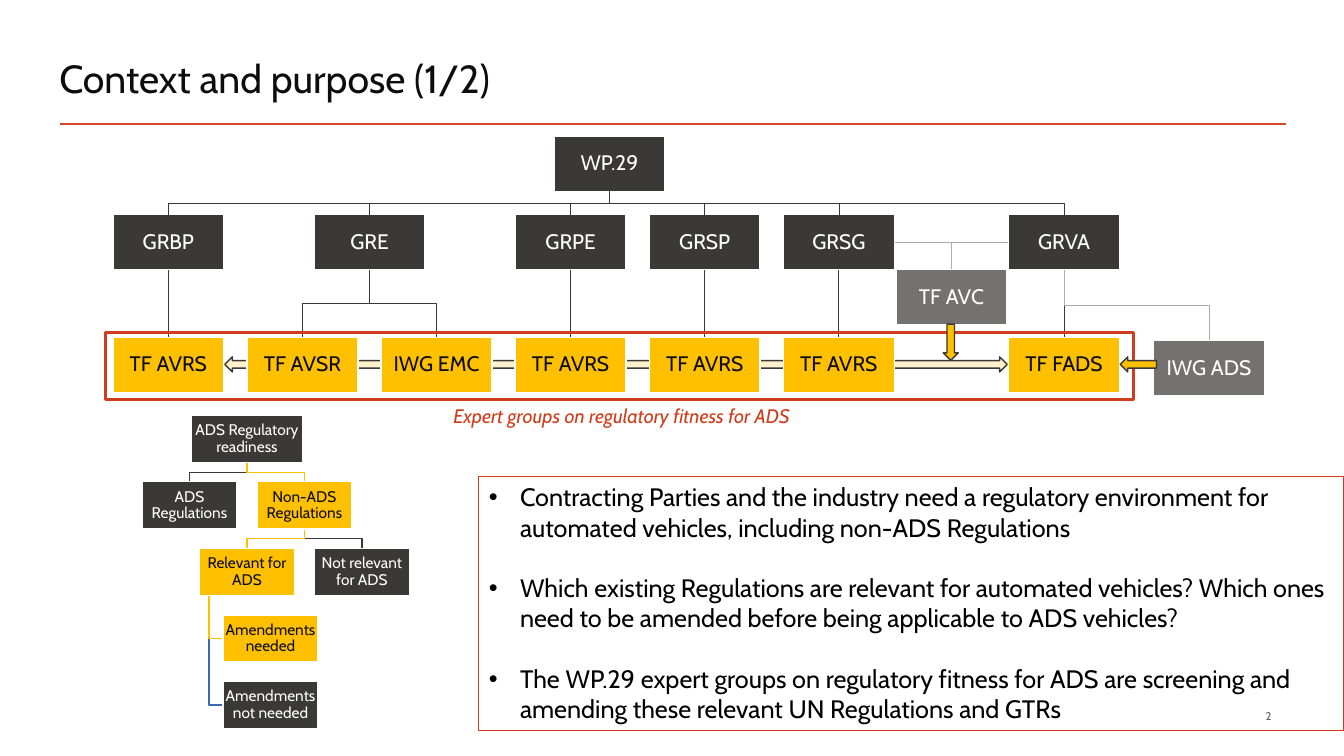
from dataclasses import dataclass
from typing import NamedTuple, Optional

from lxml import etree
from pptx import Presentation
from pptx.dml.color import RGBColor
from pptx.enum.shapes import MSO_CONNECTOR, MSO_SHAPE
from pptx.enum.text import MSO_ANCHOR, PP_ALIGN
from pptx.oxml.ns import qn
from pptx.util import Inches, Pt

RECTANGLE = MSO_SHAPE.RECTANGLE
LEFT_ARROW, TWO_WAY_ARROW = MSO_SHAPE.LEFT_ARROW, MSO_SHAPE.LEFT_RIGHT_ARROW
STRAIGHT, ELBOW = MSO_CONNECTOR.STRAIGHT, MSO_CONNECTOR.ELBOW
LEFT, CENTER, RIGHT = PP_ALIGN.LEFT, PP_ALIGN.CENTER, PP_ALIGN.RIGHT
TOP, MIDDLE = MSO_ANCHOR.TOP, MSO_ANCHOR.MIDDLE

SLIDE_WIDTH, SLIDE_HEIGHT = 13.33, 7.5
FONT = "Cabin"
DARK, YELLOW, GREY, CREAM = "3B3838", "FFC000", "767171", "FFF2CC"
WHITE, INK, BLACK, RED = "FFFFFF", "0D0D0D", "000000", "CF3D1C"
RULE_RED, PALE_GREY, BLUE, NUMBER_GREY = "D24726", "AFABAB", "3E67B2", "595959"


class Area(NamedTuple):
    left: float
    top: float
    width: float
    height: float

    @property
    def center(self) -> float:
        return self.left + self.width / 2

    @property
    def middle(self) -> float:
        return self.top + self.height / 2

    @property
    def bottom(self) -> float:
        return self.top + self.height


@dataclass(frozen=True)
class Grid:
    first_center: float
    first_top: float
    column_pitch: float
    row_pitch: float
    box_width: float
    box_height: float


@dataclass(frozen=True)
class Node:
    label: str
    column: float
    row: float
    fill: str = DARK
    parent: Optional["Node"] = None
    link: str = DARK
    width: float = 1  # in box widths

    def area(self, grid: Grid) -> Area:
        width = grid.box_width * self.width
        return Area(grid.first_center + self.column * grid.column_pitch - width / 2,
                    grid.first_top + self.row * grid.row_pitch, width, grid.box_height)


def share(left: float, top: float, width: float, height: float) -> Area:
    """Turn percentages of the slide into inches."""
    return Area(left * SLIDE_WIDTH / 100, top * SLIDE_HEIGHT / 100,
                width * SLIDE_WIDTH / 100, height * SLIDE_HEIGHT / 100)


def color(value: str) -> RGBColor:
    return RGBColor.from_string(value)


def style_shape(shape, fill: Optional[str], line: str, weight: float) -> None:
    shape.shadow.inherit = False
    if fill:
        shape.fill.solid()
        shape.fill.fore_color.rgb = color(fill)
    else:
        shape.fill.background()
    shape.line.color.rgb = color(line)
    shape.line.width = Pt(weight)


def add_box(kind, area: Area, fill: Optional[str], line: str, weight: float = 1):
    shape = slide.shapes.add_shape(kind, *map(Inches, area))
    style_shape(shape, fill, line, weight)
    return shape


def write(shape, text: str, size: float, ink: str, align=LEFT, anchor=TOP) -> None:
    frame = shape.text_frame
    frame.word_wrap = True
    frame.vertical_anchor = anchor
    frame.text = text
    for paragraph in frame.paragraphs:
        paragraph.alignment = align
        for run in paragraph.runs:
            run.font.name, run.font.size = FONT, Pt(size)
            run.font.color.rgb = color(ink)


def add_text(area: Area, text: str, size: float, ink: str, align=LEFT, anchor=TOP):
    box = slide.shapes.add_textbox(*map(Inches, area))
    write(box, text, size, ink, align, anchor)
    return box


def add_node(node: Node, grid: Grid, size: float) -> None:
    shape = add_box(RECTANGLE, node.area(grid), node.fill, WHITE)
    write(shape, node.label, size, INK if node.fill == YELLOW else WHITE, CENTER, MIDDLE)
    frame = shape.text_frame
    frame.margin_left = frame.margin_right = frame.margin_top = frame.margin_bottom = Inches(0.01)
    frame.paragraphs[0].line_spacing = 0.9


def add_line(kind, x1: float, y1: float, x2: float, y2: float, ink: str, weight: float):
    line = slide.shapes.add_connector(kind, *map(Inches, (x1, y1, x2, y2)))
    line.line.color.rgb = color(ink)
    line.line.width = Pt(weight)
    etree.SubElement(line._element.spPr, qn("a:effectLst"))
    return line


def add_elbow(start: Area, end: Area, ink: str) -> None:
    """Run down, across and down again from one box to the next."""
    x1, y1, x2, y2 = start.center, start.bottom, end.center, end.top
    if abs(x1 - x2) < 0.01:
        add_line(STRAIGHT, x1, y1, x1, y2, ink, 0.5)
        return
    drop, run = y2 - y1, abs(x2 - x1)
    left, top = (x1 + x2 - drop) / 2, (y1 + y2 - run) / 2
    line = add_line(ELBOW, left, top, left + drop, top + run, ink, 0.5)
    transform = line._element.spPr.find(qn("a:xfrm"))
    transform.set("rot", "16200000" if x2 > x1 else "5400000")
    if x2 > x1:
        transform.set("flipH", "1")


def add_branch(points: list[tuple[float, float]], ink: str) -> None:
    corners = [(Inches(x), Inches(y)) for x, y in points]
    builder = slide.shapes.build_freeform(*corners[0])
    builder.add_line_segments(corners[1:], close=False)
    style_shape(builder.convert_to_shape(), None, ink, 1)


# Working parties and their expert groups
PARTY_GRID = Grid(1.67, 1.35, 1.33, 0.78, 1.1, 0.55)
EXPERT_ROW = 2.56
wp29 = Node("WP.29", 3.29, 0)
grbp, gre, grpe, grsp, grsg, grva = parties = [
    Node(name, column, 1, DARK, wp29) for name, column in
    [("GRBP", 0), ("GRE", 1.5), ("GRPE", 3), ("GRSP", 4), ("GRSG", 5), ("GRVA", 6.68)]]
experts = [Node(name, column, EXPERT_ROW, YELLOW, parent) for name, column, parent in
           [("TF AVRS", 0, grbp), ("TF AVSR", 1, gre), ("IWG EMC", 2, gre), ("TF AVRS", 3, grpe),
            ("TF AVRS", 4, grsp), ("TF AVRS", 5, grsg), ("TF FADS", 6.68, grva)]]
avc = Node("TF AVC", 5.84, 1.7, GREY)
ads = Node("IWG ADS", 7.76, 2.6, GREY, grva, PALE_GREY)

# Decision tree
TREE_GRID = Grid(1.88, 4.12, 0.57, 0.66, 0.94, 0.47)
readiness = Node("ADS Regulatory readiness", 1, 0, width=1.17)
ads_rules = Node("ADS Regulations", 0, 1, DARK, readiness)
other_rules = Node("Non-ADS Regulations", 2, 1, YELLOW, readiness, YELLOW)
relevant = Node("Relevant for ADS", 1, 2, YELLOW, other_rules, YELLOW)
not_relevant = Node("Not relevant for ADS", 3, 2, DARK, other_rules)
not_needed = Node("Amendments not needed", 1.41, 4, DARK, relevant, BLUE)
needed = Node("Amendments needed", 1.41, 3, YELLOW, relevant, YELLOW)
tree = [readiness, ads_rules, other_rules, not_relevant, relevant, not_needed, needed]

STATEMENTS = [
    "Contracting Parties and the industry need a regulatory environment for automated vehicles, "
    "including non-ADS Regulations",
    "Which existing Regulations are relevant for automated vehicles? Which ones need to be amended "
    "before being applicable to ADS vehicles?",
    "The WP.29 expert groups on regulatory fitness for ADS are screening and amending these "
    "relevant UN Regulations and GTRs",
]

presentation = Presentation()
presentation.slide_width, presentation.slide_height = Inches(SLIDE_WIDTH), Inches(SLIDE_HEIGHT)
slide = presentation.slides.add_slide(presentation.slide_layouts[6])

# Title and rule
rule = share(4.43, 16.4, 91.22, 0)
add_line(STRAIGHT, rule.left, rule.top, rule.left + rule.width, rule.top, RULE_RED, 2)
add_text(share(3.68, 6.27, 91.97, 8.13), "Context and purpose (1/2)", 28, INK, anchor=MIDDLE)

# Corner lines from GRSG and GRVA to TF AVC
avc_area, grsg_area, grva_area = (node.area(PARTY_GRID) for node in (avc, grsg, grva))
for edge in (grva_area.left, grsg_area.left + grsg_area.width):
    corner = add_line(ELBOW, edge, grva_area.middle, avc_area.center, avc_area.top, PALE_GREY, 0.5)
    corner._element.spPr.find(qn("a:prstGeom")).set("prst", "bentConnector2")

# Tree branches, then boxes
for node in tree:
    if node.parent:
        start, end = node.parent.area(TREE_GRID), node.area(TREE_GRID)
        if node.parent is relevant:
            trunk = start.left + start.width / 10
            route = [(trunk, start.bottom), (trunk, end.middle), (end.left, end.middle)]
        else:
            bend = (start.bottom + end.top) / 2
            route = [(start.center, start.bottom), (start.center, bend),
                     (end.center, bend), (end.center, end.top)]
        add_branch(route, node.link)
for node in tree:
    add_node(node, TREE_GRID, 11)

# Statement panel and page number
panel = add_box(RECTANGLE, share(35.63, 63.07, 64.37, 33.6), None, RED, 0.75)
write(panel, "\n".join(STATEMENTS), 18, BLACK)
for position, paragraph in enumerate(panel.text_frame.paragraphs):
    paragraph.space_before = Pt(21.6 if position else 0)
    properties = paragraph._p.get_or_add_pPr()
    properties.set("marL", str(Inches(0.31)))
    properties.set("indent", str(-Inches(0.31)))
    etree.SubElement(properties, qn("a:buFont")).set("typeface", "Arial")
    etree.SubElement(properties, qn("a:buChar")).set("char", "•")
add_text(share(68.49, 93.73, 26.86, 2), "2", 8, NUMBER_GREY, RIGHT, MIDDLE)

# Organisation chart
add_box(TWO_WAY_ARROW, share(16.73, 47.2, 58.21, 2), CREAM, DARK)
groups = [wp29, *parties, *experts, ads, avc]
for node in groups:
    add_node(node, PARTY_GRID, 15)
for node in groups:
    if node.parent:
        add_elbow(node.parent.area(PARTY_GRID), node.area(PARTY_GRID), node.link)

# Frame, caption and input arrows
caption = add_text(share(31.51, 52.8, 29.48, 4.53), "Expert groups on regulatory fitness for ADS",
                   14, RED, CENTER)
caption.text_frame.paragraphs[0].runs[0].font.italic = True
add_box(RECTANGLE, share(7.88, 44, 76.44, 8.8), None, RED, 2.25)
add_box(LEFT_ARROW, share(69.39, 44.27, 2.7, 2), YELLOW, DARK).rotation = 270
add_box(LEFT_ARROW, share(83.35, 47.2, 2.7, 2), YELLOW, DARK)

presentation.save("out.pptx")
